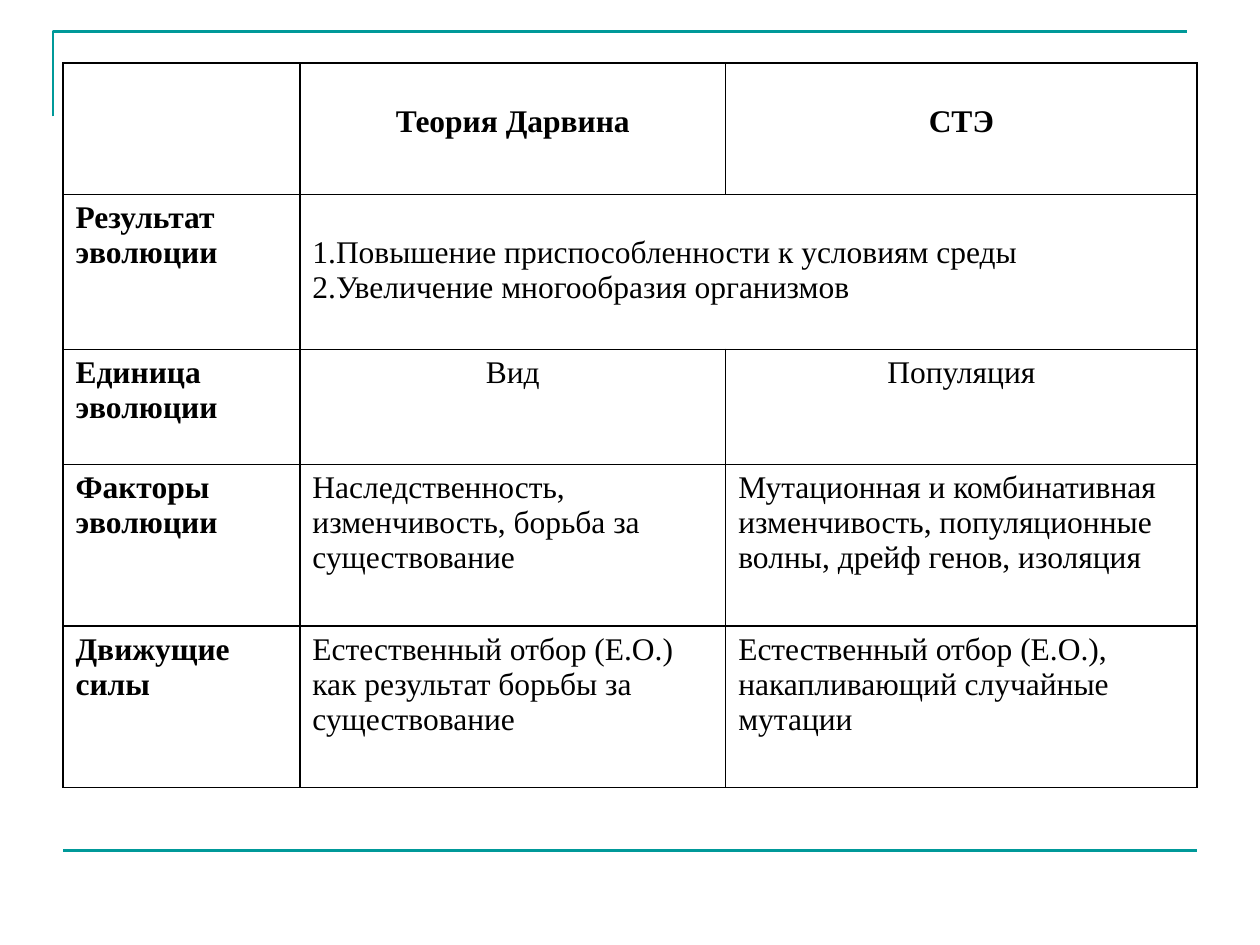
from lxml.etree import SubElement
from pptx import Presentation
from pptx.dml.color import RGBColor
from pptx.enum.shapes import MSO_CONNECTOR
from pptx.enum.text import PP_ALIGN
from pptx.oxml.ns import qn
from pptx.util import Inches, Pt

TEAL = RGBColor(0x00, 0x99, 0x99)
BLACK = RGBColor(0x00, 0x00, 0x00)
FONT = "Times New Roman"
TEXT_SIZE = Pt(18)
LINE_HEIGHT = Inches(0.28)
CELL_MARGIN = Inches(0.05)

COLUMN_WIDTHS = (1.88, 3.38, 3.74)
ROW_HEIGHTS = (1.04, 1.23, 0.91, 1.28, 1.28)
HEADER_ROW, RESULT_ROW, UNIT_ROW = 0, 1, 2
COMPARISON = (
    ("", "Теория Дарвина", "СТЭ"),
    ("Результат эволюции",
     "Повышение приспособленности к условиям среды\n"
     "Увеличение многообразия организмов", ""),
    ("Единица эволюции", "Вид", "Популяция"),
    ("Факторы эволюции",
     "Наследственность, изменчивость, борьба за существование",
     "Мутационная и комбинативная изменчивость, популяционные волны, "
     "дрейф генов, изоляция"),
    ("Движущие силы",
     "Естественный отбор (Е.О.) как результат борьбы за существование",
     "Естественный отбор (Е.О.), накапливающий случайные мутации"),
)


def style_rule(rule):
    rule.line.color.rgb = TEAL
    rule.line.width = Pt(1.5)


def add_frame(slide, width, height):
    """Draw the corner at the top left and the rule along the bottom."""
    left, top = int(width * 0.042), int(height * 0.033)
    margin = int(width * 0.05)
    pen = slide.shapes.build_freeform(left, top + int(height * 0.09))
    pen.add_line_segments(
        [(left, top), (left + int(width * 0.9), top)], close=False)
    corner = pen.convert_to_shape()
    corner.shadow.inherit = False
    corner.fill.background()
    style_rule(corner)

    base = int(height * 0.9)
    bottom_rule = slide.shapes.add_connector(
        MSO_CONNECTOR.STRAIGHT, margin, base, width - margin, base)
    style_rule(bottom_rule)
    SubElement(bottom_rule._element.spPr, qn("a:effectLst"))


def set_borders(cell):
    properties = cell._tc.get_or_add_tcPr()
    for position, side in enumerate(("lnL", "lnR", "lnT", "lnB")):
        border = SubElement(properties, qn(f"a:{side}"), w=str(Pt(1)))
        fill = SubElement(border, qn("a:solidFill"))
        SubElement(fill, qn("a:srgbClr"), val=str(BLACK))
        properties.insert(position, border)


def number_paragraph(paragraph):
    properties = paragraph._p.get_or_add_pPr()
    properties.set("marL", "0")
    properties.set("indent", "0")
    SubElement(properties, qn("a:buFont"), typeface=FONT)
    SubElement(properties, qn("a:buAutoNum"), type="arabicPeriod")


def fill_cell(cell, text, row, column):
    cell.fill.background()
    set_borders(cell)
    cell.margin_top = CELL_MARGIN
    if column > 0 and row in (HEADER_ROW, RESULT_ROW):
        cell.margin_top = CELL_MARGIN + LINE_HEIGHT
    cell.text_frame.text = text
    for paragraph in cell.text_frame.paragraphs:
        paragraph.font.size = TEXT_SIZE
        if column > 0 and row in (HEADER_ROW, UNIT_ROW):
            paragraph.alignment = PP_ALIGN.CENTER
        if column == 1 and row == RESULT_ROW:
            number_paragraph(paragraph)
        for run in paragraph.runs:
            run.font.name = FONT
            run.font.size = TEXT_SIZE
            run.font.bold = row == HEADER_ROW or column == 0
            run.font.color.rgb = BLACK


def add_comparison(slide, left, top, width, height):
    table = slide.shapes.add_table(
        len(ROW_HEIGHTS), len(COLUMN_WIDTHS), left, top, width, height).table
    table.first_row = table.horz_banding = False
    for column, share in zip(table.columns, COLUMN_WIDTHS):
        column.width = int(width * share / sum(COLUMN_WIDTHS))
    for row, share in zip(table.rows, ROW_HEIGHTS):
        row.height = int(height * share / sum(ROW_HEIGHTS))
    for row, texts in enumerate(COMPARISON):
        for column, text in enumerate(texts):
            fill_cell(table.cell(row, column), text, row, column)
    table.cell(RESULT_ROW, 1).merge(table.cell(RESULT_ROW, 2))


def main():
    presentation = Presentation()
    presentation.slide_width = width = Inches(10)
    presentation.slide_height = height = Inches(7.5)
    slide = presentation.slides.add_slide(presentation.slide_layouts[6])
    add_frame(slide, width, height)
    add_comparison(slide, Inches(0.5), Inches(0.5), Inches(9), Inches(5.75))
    presentation.save("out.pptx")


if __name__ == "__main__":
    main()
